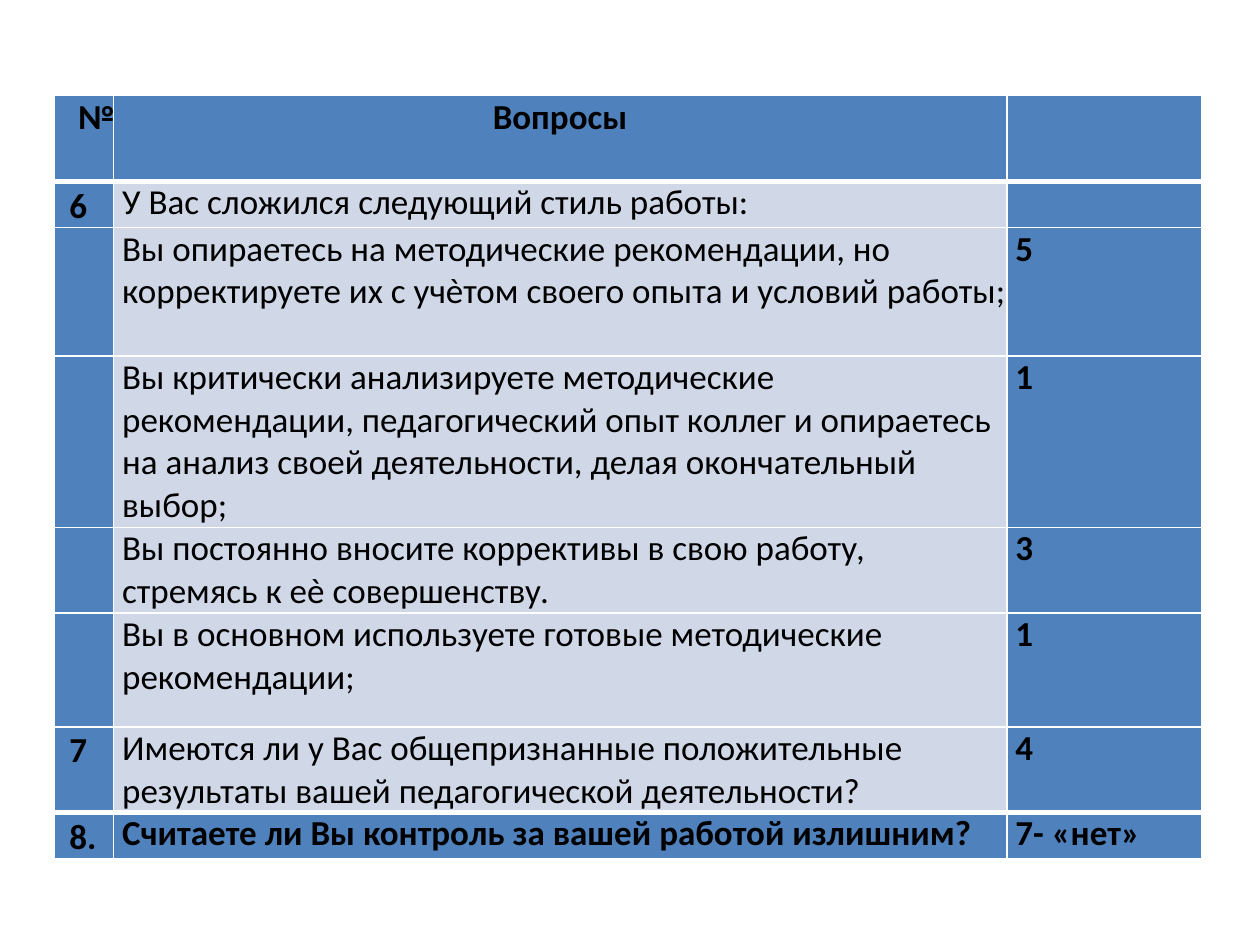
from dataclasses import dataclass

from lxml.etree import SubElement
from pptx import Presentation
from pptx.dml.color import RGBColor
from pptx.enum.text import PP_ALIGN
from pptx.oxml.ns import qn
from pptx.util import Pt

BLUE = "4F81BD"
PALE = "D0D8E8"
WHITE = "FFFFFF"
BLACK = "000000"
COLUMN_WIDTHS = (33.8, 510.5, 111.6)


@dataclass
class Question:
    height: float
    number: str
    wording: str
    answer: str
    number_spacing: float = 13.2


QUESTIONS = [
    Question(49, "№", "Вопросы", ""),
    Question(26.4, "6", "У Вас сложился следующий стиль работы:", ""),
    Question(73.2, "", "Вы опираетесь на методические рекомендации, но корректируете их "
             "с учѐтом своего опыта и условий работы;", "5"),
    Question(98, "", "Вы критически анализируете методические\n"
             "рекомендации, педагогический опыт коллег и опираетесь на анализ "
             "своей деятельности, делая окончательный выбор;", "1"),
    Question(49, "", "Вы постоянно вносите коррективы в свою работу, стремясь "
             "к еѐ совершенству.", "3"),
    Question(65, "", "Вы в основном используете готовые методические рекомендации;", "1"),
    Question(49, "7", "Имеются ли у Вас общепризнанные положительные результаты "
             "вашей педагогической деятельности?", "4", 12.8),
    Question(26.4, "8.", "Считаете ли Вы контроль за вашей работой излишним?", "7- «нет»"),
]


def color(value: str) -> RGBColor:
    return RGBColor.from_string(value)


def write(cell, text: str, *, bold: bool, left: float = 5, first: float = 0,
          align=PP_ALIGN.LEFT, spacing: float | None = None) -> None:
    frame = cell.text_frame
    frame.text = text
    for para in frame.paragraphs:
        properties = para._p.get_or_add_pPr()
        properties.set("marL", str(Pt(left)))
        properties.set("indent", str(Pt(first)))
        para.alignment = align
        if spacing:
            para.line_spacing = Pt(spacing)
        for span in para.runs:
            span.font.name = "Calibri"
            span.font.size = Pt(20)
            span.font.bold = bold
            span.font.color.rgb = color(BLACK)


def add_borders(cell, top: float, bottom: float) -> None:
    properties = cell._tc.get_or_add_tcPr()
    widths = {"a:lnL": 1, "a:lnR": 1, "a:lnT": top, "a:lnB": bottom}
    for tag, width in widths.items():
        line = SubElement(properties, qn(tag), w=str(Pt(width)))
        fill = SubElement(line, qn("a:solidFill"))
        SubElement(fill, qn("a:srgbClr"), val=WHITE)


def format_cell(cell, fill: str, top: float, bottom: float) -> None:
    cell.margin_left = cell.margin_right = Pt(0)
    cell.margin_top = cell.margin_bottom = Pt(0)
    add_borders(cell, top, bottom)
    cell.fill.solid()
    cell.fill.fore_color.rgb = color(fill)


def fill_row(table, index: int, question: Question) -> None:
    last = len(QUESTIONS) - 1
    is_header = index == 0
    is_strong = index in (0, last)
    top = 3 if index in (1, last) else 1
    bottom = 3 if index in (0, last - 1) else 1
    table.rows[index].height = Pt(question.height)
    fills = (BLUE, BLUE if is_strong else PALE, BLUE)
    cells = [table.cell(index, column) for column in range(3)]
    for cell, fill in zip(cells, fills):
        format_cell(cell, fill, top, bottom)
    number, wording, answer = cells
    if is_header:
        write(number, question.number, bold=True, left=10, first=3.6)
        write(wording, question.wording, bold=True, left=0, align=PP_ALIGN.CENTER)
        return
    if question.number:
        number.margin_top = Pt(question.number_spacing)
        write(number, question.number, bold=True, left=8.6,
              spacing=question.number_spacing)
    write(wording, question.wording, bold=is_strong)
    if question.answer:
        write(answer, question.answer, bold=True)


def main() -> None:
    deck = Presentation()
    deck.slide_width, deck.slide_height = Pt(720), Pt(540)
    page = deck.slides.add_slide(deck.slide_layouts[6])
    height = sum(question.height for question in QUESTIONS)
    table = page.shapes.add_table(len(QUESTIONS), len(COLUMN_WIDTHS), Pt(31), Pt(54.7),
                                  Pt(sum(COLUMN_WIDTHS)), Pt(height)).table
    for column, width in zip(table.columns, COLUMN_WIDTHS):
        column.width = Pt(width)
    for index, question in enumerate(QUESTIONS):
        fill_row(table, index, question)
    deck.save("out.pptx")


if __name__ == "__main__":
    main()
